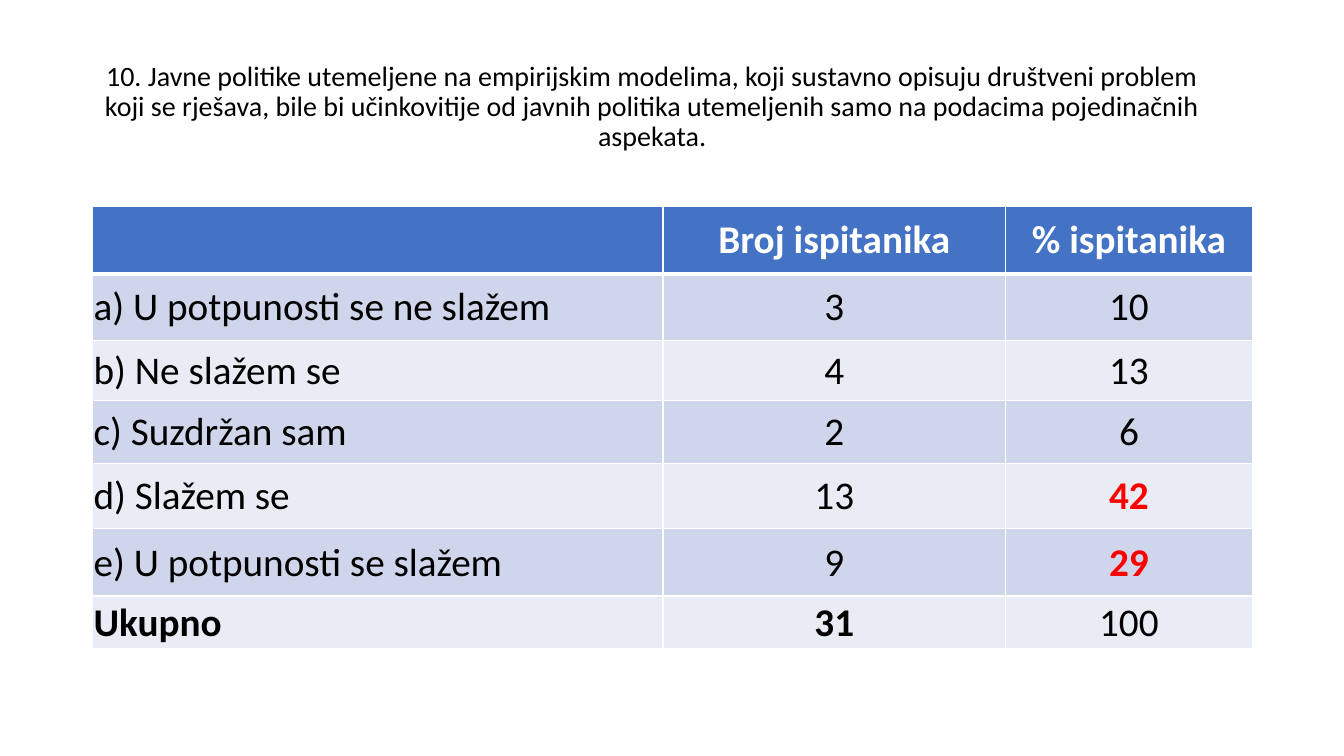
import lxml.etree
import pptx
import pptx.dml.color
import pptx.enum.text
import pptx.oxml.ns
import pptx.util

Cm, Pt = pptx.util.Cm, pptx.util.Pt
ALIGN = pptx.enum.text.PP_ALIGN
MIDDLE = pptx.enum.text.MSO_ANCHOR.MIDDLE
qn = pptx.oxml.ns.qn

COLORS = {
    "header": "4472C4",
    "odd": "CFD5EA",
    "even": "E9EBF5",
    "white": "FFFFFF",
    "text": "000000",
    "accent": "FF0000",
}

TITLE = (
    "10. Javne politike utemeljene na empirijskim modelima, koji sustavno "
    "opisuju društveni problem koji se rješava, bile bi učinkovitije od javnih "
    "politika utemeljenih samo na podacima pojedinačnih aspekata."
)
ROWS = [
    ("", "Broj ispitanika", "% ispitanika"),
    ("a) U potpunosti se ne slažem", "3", "10"),
    ("b) Ne slažem se", "4", "13"),
    ("c) Suzdržan sam", "2", "6"),
    ("d) Slažem se", "13", "42"),
    ("e) U potpunosti se slažem", "9", "29"),
    ("Ukupno", "31", "100"),
]
COL_WIDTHS = [14.37, 8.63, 6.22]
ROW_HEIGHTS = [1.7, 1.68, 1.52, 1.57, 1.65, 1.7, 1.32]
HIGHLIGHTED = {(4, 2), (5, 2)}
BOLD_TOTALS = {(6, 0), (6, 1)}


class SlideBuilder:
    font = "Calibri"

    def __init__(self, slide):
        self.slide = slide

    def color(self, name):
        return pptx.dml.color.RGBColor.from_string(COLORS[name])

    def run(self, p, text, size, color="text", bold=False):
        r = p.add_run()
        r.text = text
        r.font.name = self.font
        r.font.size = Pt(size)
        r.font.bold = bold
        r.font.color.rgb = self.color(color)

    def title(self, text, left, top, width, height):
        sp = self.slide.shapes.add_textbox(Cm(left), Cm(top), Cm(width), Cm(height))
        tf = sp.text_frame
        tf.word_wrap = True
        tf.vertical_anchor = MIDDLE
        tf.margin_bottom = Cm(0.96)
        p = tf.paragraphs[0]
        p.alignment = ALIGN.CENTER
        p.line_spacing = 0.9
        self.run(p, text, 20)

    def border(self, cell, side, width):
        tc_pr = cell._tc.get_or_add_tcPr()
        ln = lxml.etree.SubElement(tc_pr, qn(f"a:ln{side}"), w=str(Pt(width)))
        fill = lxml.etree.SubElement(ln, qn("a:solidFill"))
        lxml.etree.SubElement(fill, qn("a:srgbClr"), val=COLORS["white"])

    def cell(self, cell, text, row, col):
        for side in "LRTB":
            under_header = (row, side) in ((0, "B"), (1, "T"))
            self.border(cell, side, 3 if under_header else 1)
        cell.fill.solid()
        band = "header" if row == 0 else "odd" if row % 2 else "even"
        cell.fill.fore_color.rgb = self.color(band)
        cell.vertical_anchor = MIDDLE
        cell.margin_left = cell.margin_right = cell.margin_top = Cm(0.02)
        cell.margin_bottom = 0
        if not text:
            return
        p = cell.text_frame.paragraphs[0]
        p.alignment = ALIGN.CENTER if col else ALIGN.LEFT
        highlighted = (row, col) in HIGHLIGHTED
        color = "white" if row == 0 else "accent" if highlighted else "text"
        bold = row == 0 or highlighted or (row, col) in BOLD_TOTALS
        self.run(p, text, 28, color, bold)

    def table(self, rows, left, top, col_widths, row_heights):
        table = self.slide.shapes.add_table(
            len(rows), len(col_widths), Cm(left), Cm(top),
            Cm(sum(col_widths)), Cm(sum(row_heights)),
        ).table
        for column, width in zip(table.columns, col_widths):
            column.width = Cm(width)
        for i, (texts, height) in enumerate(zip(rows, row_heights)):
            table.rows[i].height = Cm(height)
            for j, text in enumerate(texts):
                self.cell(table.cell(i, j), text, i, j)


def main():
    prs = pptx.Presentation()
    prs.slide_width, prs.slide_height = Cm(33.87), Cm(19.05)
    s = SlideBuilder(prs.slides.add_slide(prs.slide_layouts[6]))
    s.title(TITLE, 1.98, 1.57, 28.91, 3.1)
    s.table(ROWS, 2.34, 5.2, COL_WIDTHS, ROW_HEIGHTS)
    prs.save("out.pptx")


if __name__ == "__main__":
    main()
